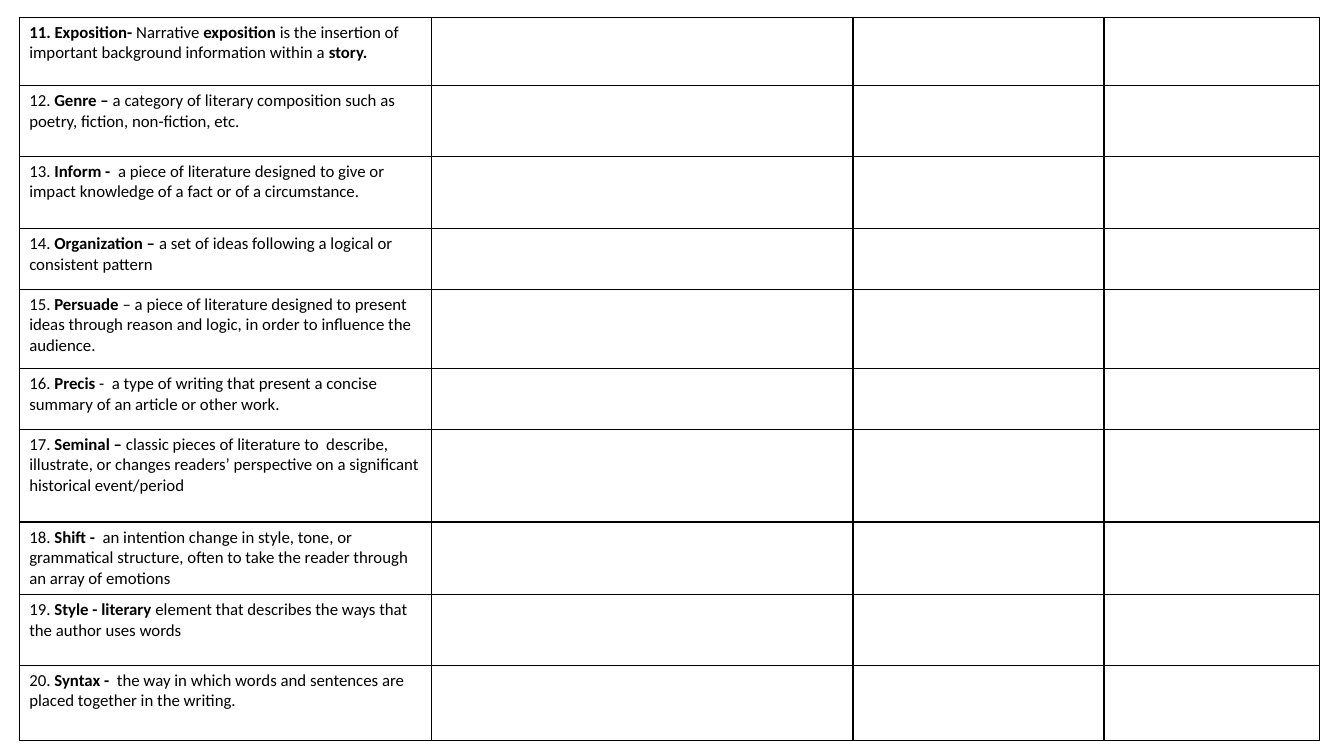
from dataclasses import dataclass

from lxml import etree
from pptx import Presentation
from pptx.dml.color import RGBColor
from pptx.oxml import ns
from pptx.table import _Cell
from pptx.util import Inches, Pt

BLACK = "000000"
WHITE = "FFFFFF"
COLUMN_WIDTHS = (4.09, 4.18, 2.49, 2.14)


@dataclass(frozen=True)
class Term:
    """A row of the glossary; asterisks enclose the bold parts."""
    height: float
    definition: str


TERMS = (
    Term(0.68, "*11. Exposition- *Narrative *exposition* is the insertion of "
               "important background information within a *story.*"),
    Term(0.70, "12.* Genre – *a category of literary composition such as "
               "poetry, fiction, non-fiction, etc."),
    Term(0.72, "13. *Inform -  *a piece of literature designed to give or "
               "impact knowledge of a fact or of a circumstance."),
    Term(0.60, "14. *Organization – *a set of ideas following a logical or "
               "consistent pattern"),
    Term(0.79, "15. *Persuade *– a piece of literature designed to present "
               "ideas through reason and logic, in order to influence the audience."),
    Term(0.60, "16. *Precis *-  a type of writing that present a concise "
               "summary of an article or other work."),
    Term(0.92, "17. *Seminal – *classic pieces of literature to  describe, "
               "illustrate, or changes readers’ perspective on a significant "
               "historical event/period"),
    Term(0.72, "18. *Shift - * an intention change in style, tone, or "
               "grammatical structure, often to take the reader through "
               "an array of emotions"),
    Term(0.70, "19. *Style - literary* element that describes the ways that "
               "the author uses words"),
    Term(0.75, "20. *Syntax - * the way in which words and sentences are "
               "placed together in the writing."),
)


def color(value: str) -> RGBColor:
    return RGBColor.from_string(value)


def format_cell(cell: _Cell) -> None:
    """Give the cell a white fill and thin black borders."""
    properties = cell._tc.get_or_add_tcPr()
    for side in ("lnL", "lnR", "lnT", "lnB"):
        line = etree.SubElement(properties, ns.qn(f"a:{side}"), w=str(Pt(1)))
        fill = etree.SubElement(line, ns.qn("a:solidFill"))
        etree.SubElement(fill, ns.qn("a:srgbClr"), val=BLACK)
    cell.fill.solid()
    cell.fill.fore_color.rgb = color(WHITE)


def write_definition(cell: _Cell, definition: str) -> None:
    paragraph = cell.text_frame.paragraphs[0]
    for index, part in enumerate(definition.split("*")):
        if not part:
            continue
        run = paragraph.add_run()
        run.text = part
        run.font.name = "Calibri"
        run.font.size = Pt(12)
        run.font.bold = index % 2 == 1
        run.font.color.rgb = color(BLACK)


def main() -> None:
    presentation = Presentation()
    presentation.slide_width = Inches(13.33)
    presentation.slide_height = Inches(7.5)
    slide = presentation.slides.add_slide(presentation.slide_layouts[6])

    table = slide.shapes.add_table(
        len(TERMS), len(COLUMN_WIDTHS), Inches(0.19), Inches(0.17),
        Inches(sum(COLUMN_WIDTHS)), Inches(sum(term.height for term in TERMS)),
    ).table
    table.first_row = False
    table.horz_banding = False
    for column, width in zip(table.columns, COLUMN_WIDTHS):
        column.width = Inches(width)
    for row, term in zip(table.rows, TERMS):
        row.height = Inches(term.height)
        for cell in row.cells:
            format_cell(cell)
        write_definition(row.cells[0], term.definition)

    presentation.save("out.pptx")


if __name__ == "__main__":
    main()
